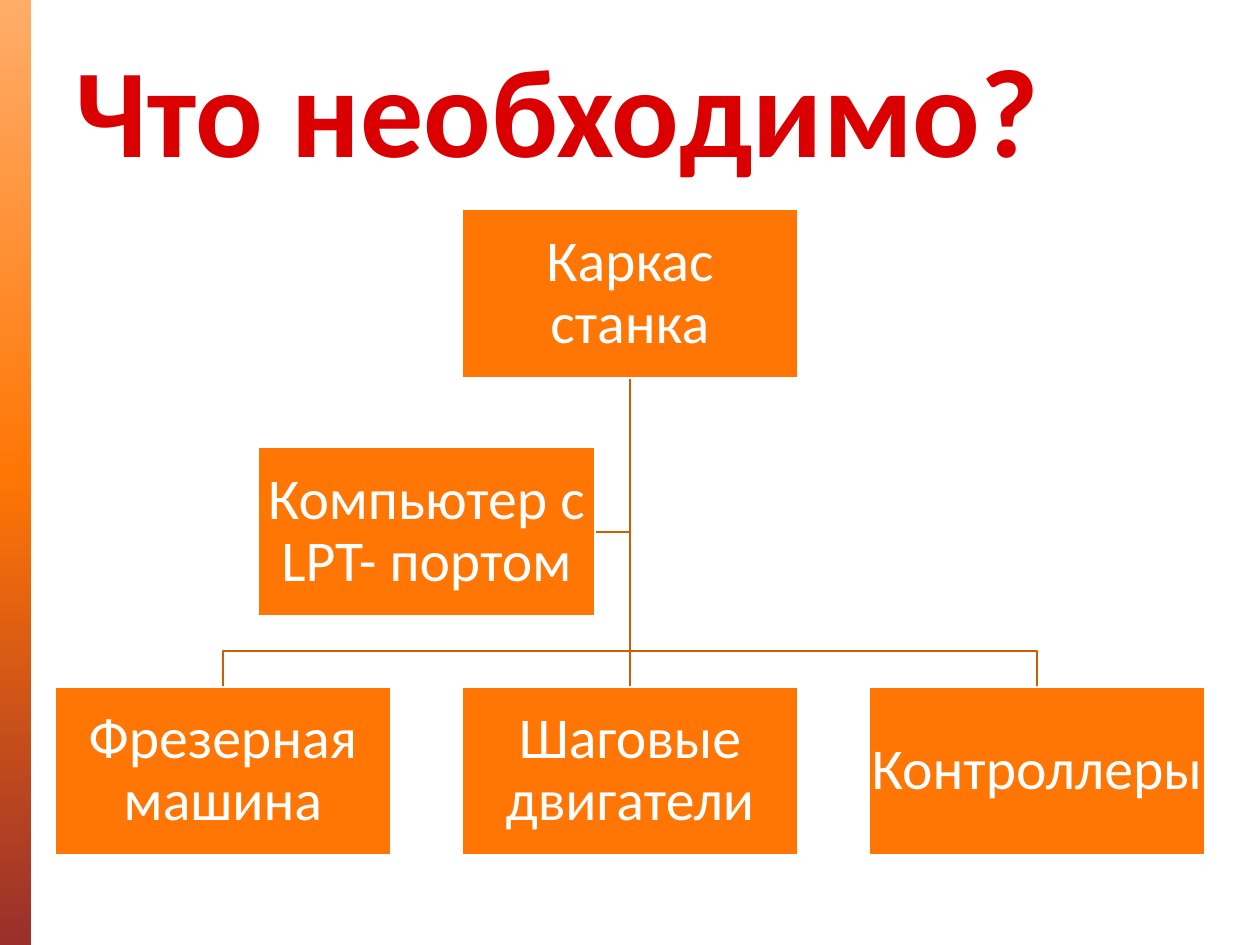
"""Build a slide with a chart of the parts a milling machine needs."""
import copy
from dataclasses import dataclass

import pptx
import pptx.dml.color
import pptx.enum.shapes
import pptx.enum.text
import pptx.oxml.ns
import pptx.util
from lxml import etree
from pptx.util import Inches


@dataclass(frozen=True)
class Theme:
    font: str = "Calibri"
    title_color: str = "DA0002"
    box_color: str = "FF7605"
    text_color: str = "FFFFFF"
    link_color: str = "CC5E04"
    sidebar_stops: tuple = ((0, "FFAD69"), (0.5, "FF7605"), (1, "9A2F2C"))
    title_size: int = 72
    box_size: int = 33
    line_width: float = 1.25


theme = Theme()
rgb = pptx.dml.color.RGBColor.from_string
RECTANGLE = pptx.enum.shapes.MSO_SHAPE.RECTANGLE
BOX_WIDTH, BOX_HEIGHT = 2.67, 1.34
CENTER, COLUMN_STEP = 5, 3.23
ROOT_TOP, ASSISTANT_TOP, PARTS_TOP = 1.66, 3.55, 5.45
ROOT_BOTTOM = ROOT_TOP + BOX_HEIGHT
ASSISTANT_LEFT = 2.05
BRANCH_Y = 5.17

deck = pptx.Presentation()
deck.slide_width, deck.slide_height = Inches(10), Inches(7.5)
slide = deck.slides.add_slide(deck.slide_layouts[5])


def add_box(label, left, top):
    box = slide.shapes.add_shape(
        RECTANGLE, Inches(left), Inches(top), Inches(BOX_WIDTH), Inches(BOX_HEIGHT))
    box.shadow.inherit = False
    box.fill.solid()
    box.fill.fore_color.rgb = rgb(theme.box_color)
    box.line.color.rgb = rgb(theme.text_color)
    box.line.width = pptx.util.Pt(theme.line_width)
    frame = box.text_frame
    frame.word_wrap = True
    frame.vertical_anchor = pptx.enum.text.MSO_ANCHOR.MIDDLE
    frame.margin_left = frame.margin_right = Inches(0.02)
    frame.margin_top = frame.margin_bottom = Inches(0.02)
    paragraph = frame.paragraphs[0]
    paragraph.text = label
    paragraph.alignment = pptx.enum.text.PP_ALIGN.CENTER
    paragraph.line_spacing = 0.9
    paragraph.font.name = theme.font
    paragraph.font.size = pptx.util.Pt(theme.box_size)
    paragraph.font.color.rgb = rgb(theme.text_color)
    return box


def add_branch(*corners):
    points = [(Inches(x), Inches(y)) for x, y in corners]
    builder = slide.shapes.build_freeform(*points[0])
    builder.add_line_segments(points[1:], close=False)
    branch = builder.convert_to_shape()
    branch.shadow.inherit = False
    branch.fill.background()
    branch.line.color.rgb = rgb(theme.link_color)
    branch.line.width = pptx.util.Pt(theme.line_width)


sidebar = slide.shapes.add_shape(RECTANGLE, 0, 0, Inches(0.25), deck.slide_height)
sidebar.shadow.inherit = False
sidebar.line.fill.background()
sidebar.fill.gradient()
sidebar.fill.gradient_angle = 270
stop_list = sidebar._element.spPr.find(".//" + pptx.oxml.ns.qn("a:gsLst"))
stop_list.append(copy.deepcopy(stop_list[-1]))
for stop, (position, color) in zip(sidebar.fill.gradient_stops, theme.sidebar_stops):
    stop.position = position
    stop.color.rgb = rgb(color)

title = slide.shapes.title
title.left, title.top = Inches(0.5), Inches(0.3)
title.width, title.height = Inches(9), Inches(1.25)
heading = title.text_frame
heading.auto_size = pptx.enum.text.MSO_AUTO_SIZE.NONE
heading.vertical_anchor = pptx.enum.text.MSO_ANCHOR.BOTTOM
heading.margin_left = heading.margin_right = Inches(0.1)
heading.margin_top = heading.margin_bottom = Inches(0.1)
question = heading.paragraphs[0]
question.text = "Что необходимо?"
question.alignment = pptx.enum.text.PP_ALIGN.LEFT
question.font.name = theme.font
question.font.size = pptx.util.Pt(theme.title_size)
question.font.bold = True
question.font.color.rgb = rgb(theme.title_color)

assistant_y = ASSISTANT_TOP + BOX_HEIGHT / 2
add_branch((CENTER, ROOT_BOTTOM), (CENTER, assistant_y),
           (ASSISTANT_LEFT + BOX_WIDTH, assistant_y))
for x in (CENTER + COLUMN_STEP, CENTER - COLUMN_STEP):
    add_branch((CENTER, ROOT_BOTTOM), (CENTER, BRANCH_Y), (x, BRANCH_Y), (x, PARTS_TOP))
trunk = slide.shapes.add_connector(
    pptx.enum.shapes.MSO_CONNECTOR.STRAIGHT,
    Inches(CENTER), Inches(ROOT_BOTTOM), Inches(CENTER), Inches(PARTS_TOP))
trunk.line.color.rgb = rgb(theme.link_color)
trunk.line.width = pptx.util.Pt(theme.line_width)
etree.SubElement(trunk._element.spPr, pptx.oxml.ns.qn("a:effectLst"))

frame_box = add_box("Каркас станка", CENTER - BOX_WIDTH / 2, ROOT_TOP)
part_boxes = [
    add_box(label, CENTER + (column - 1) * COLUMN_STEP - BOX_WIDTH / 2, PARTS_TOP)
    for column, label in enumerate(("Фрезерная машина", "Шаговые двигатели", "Контроллеры"))
]
add_box("Компьютер с LPT- портом", ASSISTANT_LEFT, ASSISTANT_TOP)
trunk.begin_connect(frame_box, 2)
trunk.end_connect(part_boxes[1], 0)

deck.save("out.pptx")
